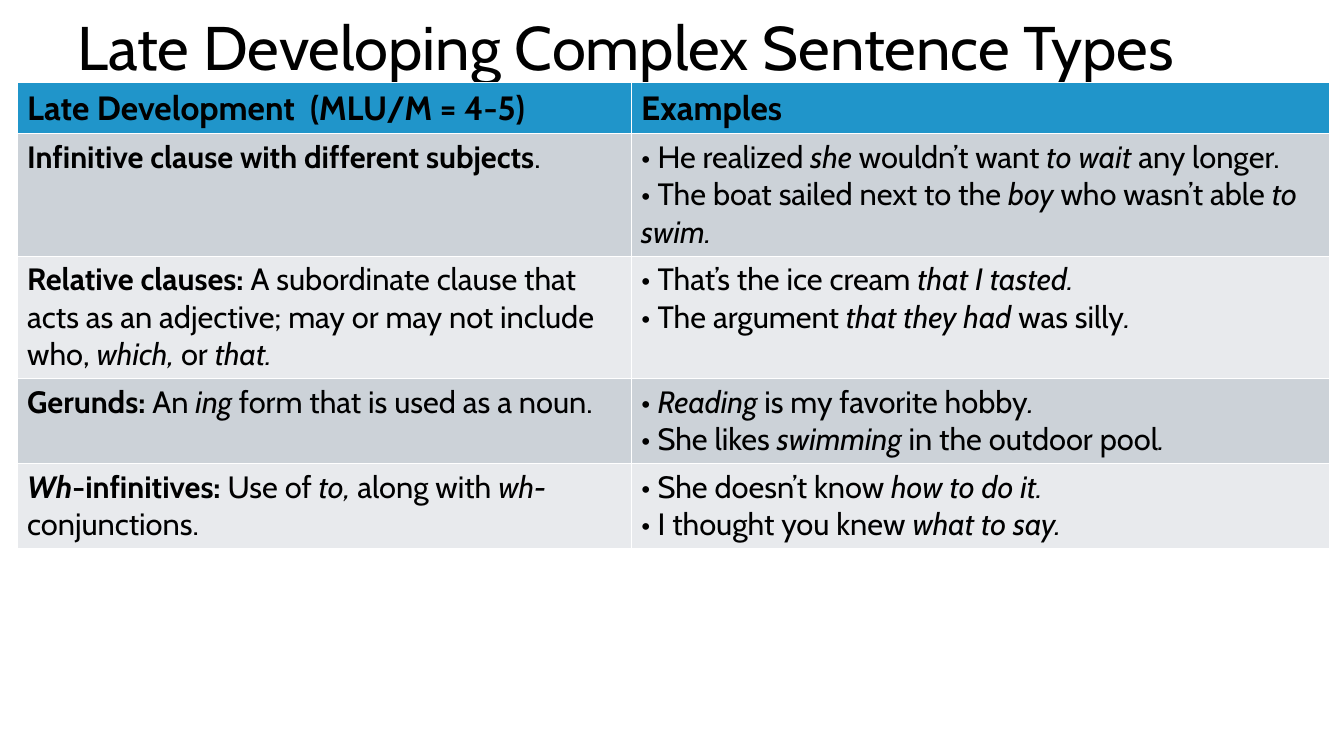
"""Build a slide with a table of late developing complex sentence types."""
from pptx import Presentation
from pptx.dml.color import RGBColor
from pptx.enum.text import MSO_ANCHOR, PP_ALIGN
from pptx.util import Inches, Pt

MIDDLE = MSO_ANCHOR.MIDDLE
LEFT = PP_ALIGN.LEFT
FONT = "Cabin"
BLACK = "000000"
HEADER_FILL = "2095CA"
BAND_FILLS = ["CCD2D8", "E8EAED"]

TITLE = "Late Developing Complex Sentence Types"
# In the texts below, * switches bold and _ switches italic.
HEADER = ["*Late Development  (MLU/M = 4-5)*", "*Examples*"]
ROWS = [
    ["*Infinitive clause with different subjects*.",
     "• He realized _she_ wouldn’t want _to wait _any longer.\n"
     "• The boat sailed next to the _boy_ who wasn’t able _to swim._"],
    ["*Relative clauses: *A subordinate clause that acts as an adjective; "
     "may or may not include who, _which,_ or _that._",
     "• That’s the ice cream _that I tasted._\n"
     "• The argument _that they had _was silly_._"],
    ["*Gerunds: *An _ing_ form that is used as a noun.",
     "• _Reading _is my favorite hobby_._\n"
     "• She likes _swimming _in the outdoor pool_._"],
    ["*_Wh_-infinitives: *Use of _to,_ along with _wh-_ conjunctions.",
     "• She doesn’t know _how to do it._\n"
     "• I thought you knew _what to say._"],
]
COLUMN_WIDTHS = [6.09, 6.93]
ROW_HEIGHTS = [0.45, 1.19, 0.83, 0.84, 0.79]
TABLE_LEFT, TABLE_TOP = 0.17, 0.82


def color(value):
    return RGBColor.from_string(value)


def add_styled_runs(paragraph, text, size):
    bold = italic = False
    for bold_part in text.split("*"):
        for part in bold_part.split("_"):
            if part:
                run = paragraph.add_run()
                run.text = part
                run.font.name = FONT
                run.font.size = Pt(size)
                run.font.color.rgb = color(BLACK)
                run.font.bold = bold
                run.font.italic = italic
            italic = not italic
        italic = not italic
        bold = not bold


def fill_cell(cell, text, size, fill):
    cell.fill.solid()
    cell.fill.fore_color.rgb = color(fill)
    frame = cell.text_frame
    for index, line in enumerate(text.split("\n")):
        paragraph = frame.add_paragraph() if index else frame.paragraphs[0]
        add_styled_runs(paragraph, line, size)


def add_title(slide):
    title = slide.shapes.title
    title.left, title.top = Inches(0.67), Inches(0.03)
    title.width, title.height = Inches(12), Inches(0.94)
    title.text_frame.vertical_anchor = MIDDLE
    paragraph = title.text_frame.paragraphs[0]
    paragraph.alignment = LEFT
    paragraph.line_spacing = 0.9
    add_styled_runs(paragraph, TITLE, 44)


def add_sentence_table(slide):
    table = slide.shapes.add_table(
        len(ROW_HEIGHTS), len(COLUMN_WIDTHS),
        Inches(TABLE_LEFT), Inches(TABLE_TOP),
        Inches(sum(COLUMN_WIDTHS)), Inches(sum(ROW_HEIGHTS))).table
    for column, width in zip(table.columns, COLUMN_WIDTHS):
        column.width = Inches(width)
    for row, height in zip(table.rows, ROW_HEIGHTS):
        row.height = Inches(height)
    for cell, text in zip(table.rows[0].cells, HEADER):
        fill_cell(cell, text, 24, HEADER_FILL)
    for index, texts in enumerate(ROWS):
        for cell, text in zip(table.rows[index + 1].cells, texts):
            fill_cell(cell, text, 22, BAND_FILLS[index % 2])


def main():
    presentation = Presentation()
    presentation.slide_width = Inches(13.33)
    presentation.slide_height = Inches(7.5)
    slide = presentation.slides.add_slide(presentation.slide_layouts[5])
    add_title(slide)
    add_sentence_table(slide)
    presentation.save("out.pptx")


if __name__ == "__main__":
    main()
